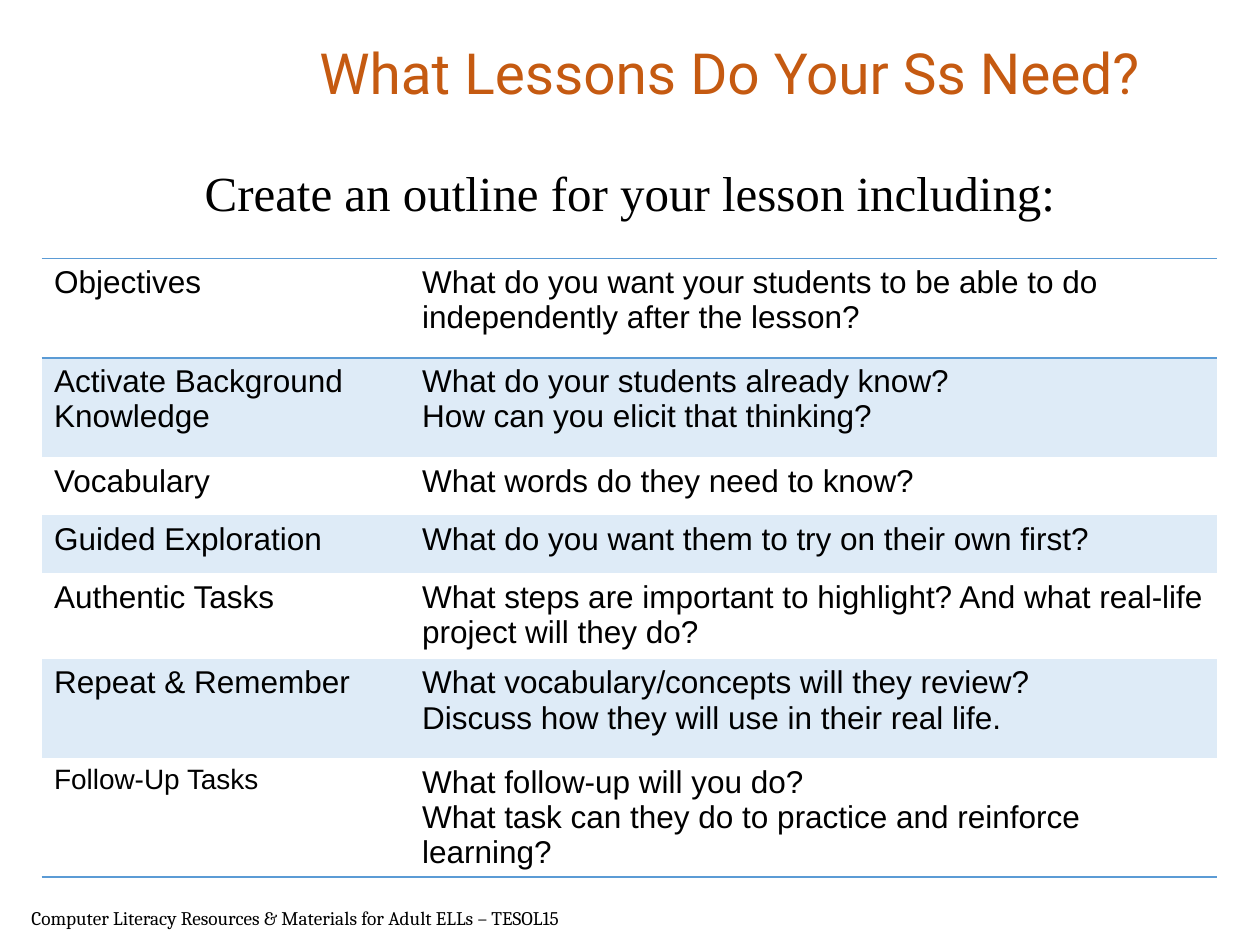
"""Build the lesson outline slide with its table of planning questions."""
from lxml.etree import SubElement
from pptx import Presentation
from pptx.dml.color import RGBColor
from pptx.enum.text import MSO_ANCHOR, MSO_AUTO_SIZE, PP_ALIGN
from pptx.oxml.ns import qn
from pptx.util import Inches, Pt

TITLE = "What Lessons Do Your Ss Need?"
LEAD = "Create an outline for your lesson including:"
FOOT = "Computer Literacy Resources & Materials for Adult ELLs – TESOL15"
ROWS = [
    ("Objectives", ["What do you want your students to be able to do independently after the lesson?"], 0.79),
    ("Activate Background Knowledge", ["What do your students already know?", "How can you elicit that thinking?"], 0.79),
    ("Vocabulary", ["What words do they need to know?"], 0.46),
    ("Guided Exploration", ["What do you want them to try on their own first?"], 0.46),
    ("Authentic Tasks", ["What steps are important to highlight? And what real-life project will they do?"], 0.68),
    ("Repeat & Remember", ["What vocabulary/concepts will they review?", "Discuss how they will use in their real life."], 0.79),
    ("Follow-Up Tasks", ["What follow-up will you do?", "What task can they do to practice and reinforce learning?"], 0.91),
]
COLS = (2.92, 6.41)
BLACK = RGBColor(0, 0, 0)
THEME = {
    "title": {"name": "Roboto", "size": Pt(32.4), "color": RGBColor.from_string("C55A11")},
    "lead": {"name": "Times New Roman", "size": Pt(28), "color": BLACK},
    "cell": {"name": "Arial", "size": Pt(18), "color": BLACK},
    "small": {"name": "Arial", "size": Pt(16), "color": BLACK},
    "foot": {"name": "Cambria", "size": Pt(11), "color": BLACK},
    "band": RGBColor.from_string("DEEBF7"),
    "rule": "5B9BD5",
    "plain": "{2D5ABB26-0587-4C30-8999-92F81FD0307C}",
}


def write(frame, lines, style, align=PP_ALIGN.LEFT):
    frame.text = "\n".join(lines)
    frame.word_wrap = True
    for para in frame.paragraphs:
        para.alignment = align
        for key, value in THEME[style].items():
            if key == "color":
                para.runs[0].font.color.rgb = value
            else:
                setattr(para.runs[0].font, key, value)


def place(shape, left, top, width, height):
    shape.left, shape.top = Inches(left), Inches(top)
    shape.width, shape.height = Inches(width), Inches(height)


def rule(cell, side):
    line = SubElement(cell._tc.get_or_add_tcPr(), qn(f"a:ln{side}"), w=str(Pt(1)))
    fill = SubElement(line, qn("a:solidFill"))
    SubElement(fill, qn("a:srgbClr"), val=THEME["rule"])


def add_heads(slide):
    title, body = slide.placeholders
    place(title, 2.08, 0.02, 7.42, 1.1)
    place(body, 0.5, 1.24, 9, 4)
    for shape, text, style in ((title, TITLE, "title"), (body, LEAD, "lead")):
        shape.text_frame.auto_size = MSO_AUTO_SIZE.NONE
        write(shape.text_frame, [text], style, PP_ALIGN.CENTER)
    title.text_frame.vertical_anchor = MSO_ANCHOR.MIDDLE
    para = body.text_frame.paragraphs[0]
    para.space_before = Pt(0)
    props = para._p.get_or_add_pPr()
    props.set("marL", "0")
    props.set("indent", "0")
    SubElement(props, qn("a:buNone"))


def add_grid(slide):
    high = sum(row[2] for row in ROWS)
    grid = slide.shapes.add_table(
        len(ROWS), len(COLS), Inches(0.33), Inches(2.05), Inches(sum(COLS)), Inches(high)
    ).table
    grid.first_row = grid.horz_banding = False
    grid._tbl.tblPr.find(qn("a:tableStyleId")).text = THEME["plain"]
    for col, width in zip(grid.columns, COLS):
        col.width = Inches(width)
    last = len(ROWS) - 1
    for i, (topic, asks, height) in enumerate(ROWS):
        grid.rows[i].height = Inches(height)
        for j, lines in enumerate(([topic], asks)):
            cell = grid.cell(i, j)
            write(cell.text_frame, lines, "small" if (i, j) == (last, 0) else "cell")
            if i == 0:
                rule(cell, "T")
            if i in (0, last):
                rule(cell, "B")
            if i % 2:
                cell.fill.solid()
                cell.fill.fore_color.rgb = THEME["band"]
            else:
                cell.fill.background()


def main():
    deck = Presentation()
    deck.slide_width, deck.slide_height = Inches(10), Inches(7.5)
    slide = deck.slides.add_slide(deck.slide_layouts[1])
    add_heads(slide)
    add_grid(slide)
    foot = slide.shapes.add_textbox(Inches(0.15), Inches(7.14), Inches(4.7), Inches(0.35))
    write(foot.text_frame, [FOOT], "foot")
    deck.save("out.pptx")


if __name__ == "__main__":
    main()
